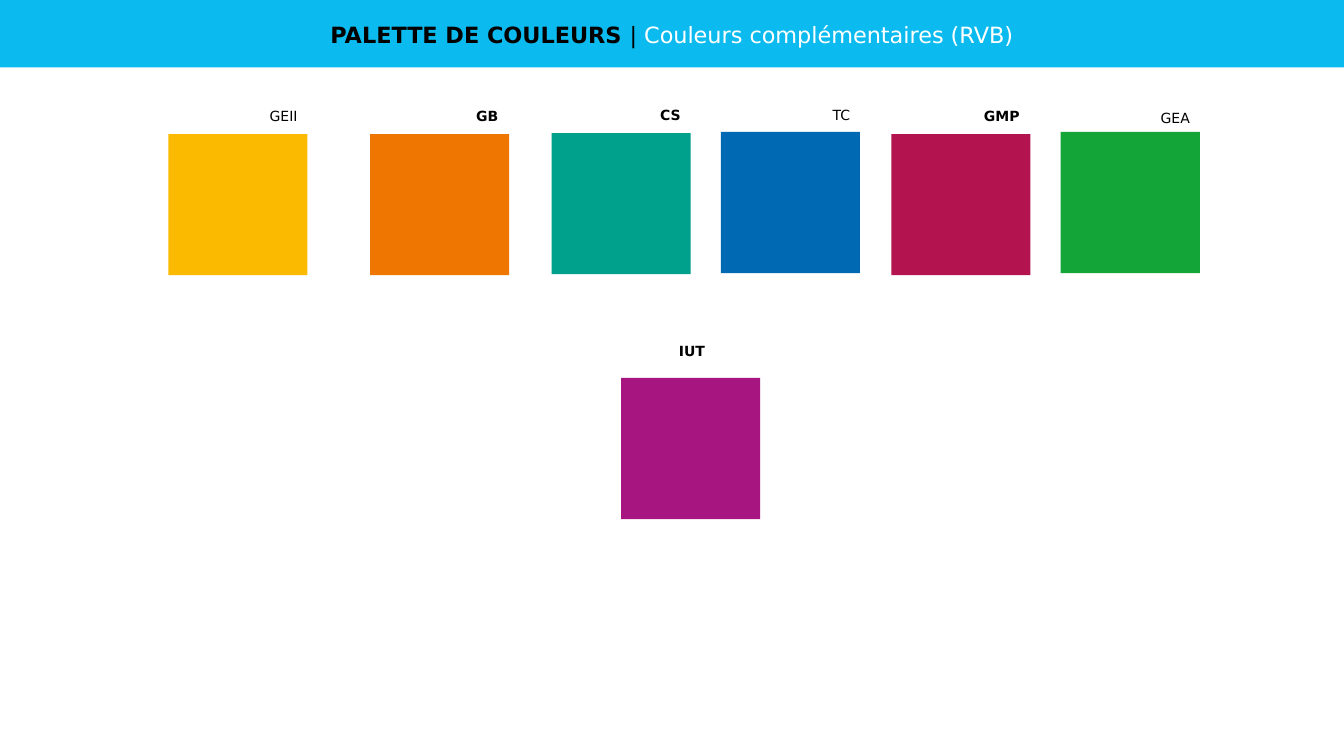
from dataclasses import dataclass

from pptx import Presentation
from pptx.dml.color import RGBColor
from pptx.enum import shapes, text
from pptx.util import Inches, Pt

TITLE = [
    ("PALETTE DE COULEURS ", True, "000000"),
    ("| ", False, "000000"),
    ("Couleurs complémentaires (RVB)", False, "FFFFFF"),
]

# name, bold, colour, square left, square top, label top, label width, label inset
SWATCHES = [
    ("GEII", False, "FBBA00", 1.67, 1.33, 1.02, 0.54, 0),
    ("GB", True, "EE7601", 3.67, 1.33, 1.02, 0.44, 0.01),
    ("CS", True, "00A18C", 5.47, 1.32, 1.01, 0.44, 0),
    ("TC", False, "0069B4", 7.15, 1.31, 1.01, 0.42, 0),
    ("GMP", True, "B31450", 8.84, 1.33, 1.02, 0.58, 0.01),
    ("GEA", False, "13A538", 10.52, 1.31, 1.04, 0.53, 0),
    ("IUT", True, "A71680", 6.16, 3.75, 3.35, 0.52, 0.45),
]


@dataclass(frozen=True)
class Theme:
    font: str = "DejaVu Sans"
    band: str = "0BBBEF"
    ink: str = "000000"
    title: int = 16
    label: int = 10


THEME = Theme()
WIDTH, HEIGHT = 13.33, 7.5
BAND, HEAD = 0.67, 0.68
SIDE, TALL = 1.38, 1.4
LABEL = 0.27


def add_run(para, words, size, bold, color):
    run = para.add_run()
    run.text = words
    font = run.font
    font.name, font.size, font.bold = THEME.font, Pt(size), bold
    font.color.rgb = RGBColor.from_string(color)


def add_rect(slide, box, color):
    rect = slide.shapes.add_shape(
        shapes.MSO_SHAPE.RECTANGLE, *map(Inches, box))
    rect.fill.solid()
    rect.fill.fore_color.rgb = RGBColor.from_string(color)
    rect.line.fill.background()
    rect.shadow.inherit = False
    return rect


def add_title(slide):
    """Fill the title placeholder and lay the band behind it."""
    title = slide.shapes.title
    title.left, title.top = Inches(0), Inches(0)
    title.width, title.height = Inches(WIDTH), Inches(HEAD)
    band = add_rect(slide, (0, 0, WIDTH, BAND), THEME.band)
    title.element.addprevious(band.element)
    frame = title.text_frame
    frame.auto_size = text.MSO_AUTO_SIZE.NONE
    frame.vertical_anchor = text.MSO_ANCHOR.MIDDLE
    para = frame.paragraphs[0]
    para.alignment = text.PP_ALIGN.CENTER
    for words, bold, color in TITLE:
        add_run(para, words, THEME.title, bold, color)


def add_swatch(slide, name, bold, color, left, top, head, width, inset):
    """Draw a square with its name above, set from the square's right edge."""
    add_rect(slide, (left, top, SIDE, TALL), color)
    start = left + SIDE - inset - width
    box = slide.shapes.add_textbox(*map(Inches, (start, head, width, LABEL)))
    frame = box.text_frame
    frame.word_wrap = False
    frame.auto_size = text.MSO_AUTO_SIZE.NONE
    para = frame.paragraphs[0]
    para.alignment = text.PP_ALIGN.RIGHT
    add_run(para, name, THEME.label, bold, THEME.ink)


def main():
    deck = Presentation()
    deck.slide_width, deck.slide_height = Inches(WIDTH), Inches(HEIGHT)
    slide = deck.slides.add_slide(deck.slide_layouts.get_by_name("Title Only"))
    add_title(slide)
    for swatch in SWATCHES:
        add_swatch(slide, *swatch)
    deck.save("out.pptx")


if __name__ == "__main__":
    main()
